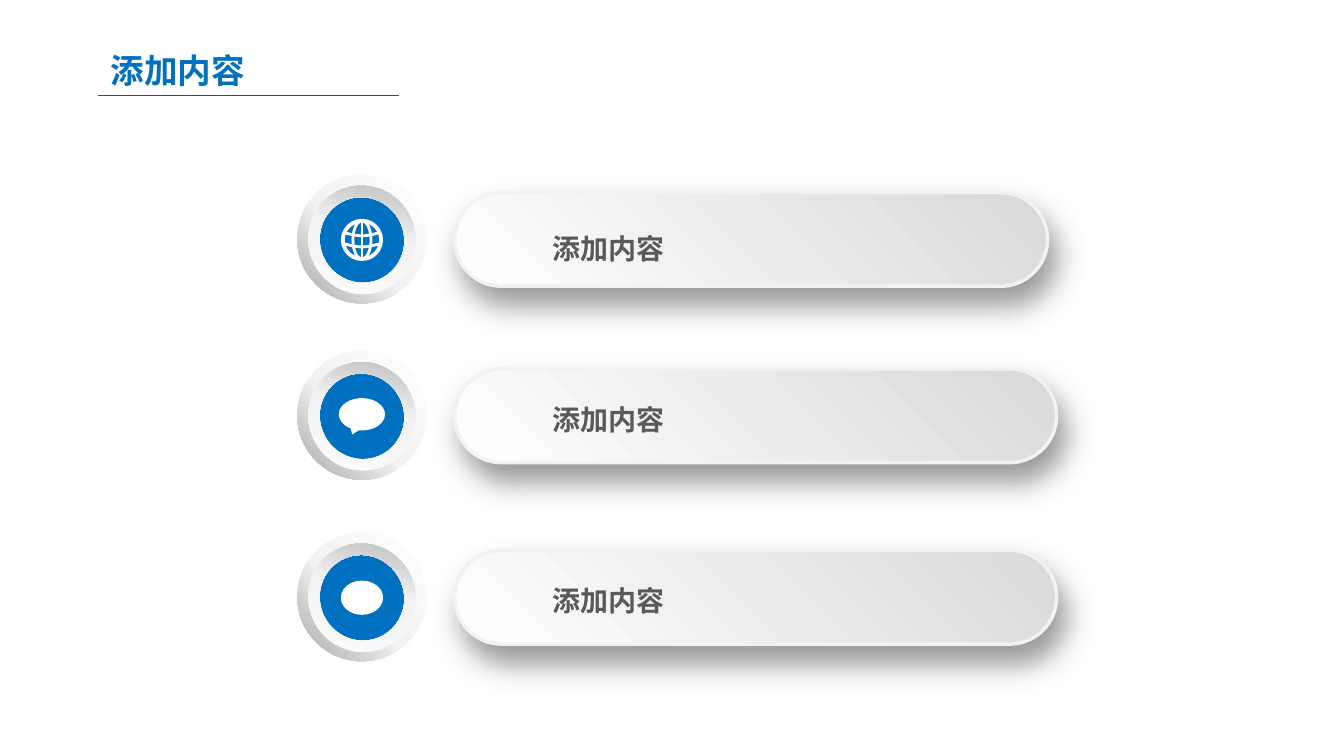
"""Build a slide with a title and three round badges beside pill-shaped labels."""
from math import cos, pi

from pptx import Presentation
from pptx.dml.color import RGBColor
from pptx.enum.shapes import MSO_CONNECTOR, MSO_SHAPE
from pptx.enum.text import MSO_ANCHOR, MSO_AUTO_SIZE, PP_ALIGN
from pptx.oxml import parse_xml
from pptx.oxml.ns import nsdecls, qn
from pptx.util import Inches, Pt

FONT = "Noto Sans CJK SC"
BLUE = "0070C0"
WHITE = "FFFFFF"
PILL_STOPS = [(0, "D9D9D9"), (100, WHITE)]
RING_STOPS = [(0, WHITE), (55, "F2F2F2"), (100, "A6A6A6")]


def paint(shape, fill=None, stops=(), line=None, line_width=0):
    """Set a solid, gradient or empty fill and the outline, without a shadow."""
    shape.shadow.inherit = False
    if stops:
        shape.fill.gradient()
        stop_xml = "".join(
            f'<a:gs pos="{position * 1000}"><a:srgbClr val="{color}"/></a:gs>'
            for position, color in stops)
        properties = shape._element.spPr
        properties.replace(properties.find(qn("a:gradFill")), parse_xml(
            f'<a:gradFill {nsdecls("a")} rotWithShape="1"><a:gsLst>{stop_xml}</a:gsLst>'
            f'<a:lin ang="{135 * 60000}" scaled="0"/></a:gradFill>'))
    elif fill:
        shape.fill.solid()
        shape.fill.fore_color.rgb = RGBColor.from_string(fill)
    else:
        shape.fill.background()
    if line:
        shape.line.color.rgb = RGBColor.from_string(line)
        shape.line.width = Pt(line_width)
    else:
        shape.line.fill.background()


def write(shape, text, size, color, alignment):
    """Put one bold line of text into a shape that grows with it."""
    frame = shape.text_frame
    frame.text = text
    frame.word_wrap = False
    frame.auto_size = MSO_AUTO_SIZE.SHAPE_TO_FIT_TEXT
    frame.vertical_anchor = MSO_ANCHOR.TOP
    paragraph = frame.paragraphs[0]
    paragraph.alignment = alignment
    font = paragraph.runs[0].font
    font.size = Pt(size)
    font.bold = True
    font.name = FONT
    font.color.rgb = RGBColor.from_string(color)
    font._element.append(parse_xml(f'<a:ea {nsdecls("a")} typeface="{FONT}"/>'))


presentation = Presentation()
presentation.slide_width = Inches(13.33)
presentation.slide_height = Inches(7.5)
slide = presentation.slides.add_slide(presentation.slide_layouts[5])
shapes = slide.shapes

title = shapes.title
title.left, title.top = Inches(0.99), Inches(0.44)
title.width, title.height = Inches(1.55), Inches(0.5)
write(title, "添加内容", 24, BLUE, PP_ALIGN.CENTER)

underline = shapes.add_connector(
    MSO_CONNECTOR.STRAIGHT, Inches(0.97), Inches(0.95), Inches(3.96), Inches(0.95))
underline.line.color.rgb = RGBColor.from_string("005DA2")
underline.line.width = Pt(1)
underline._element.spPr.append(parse_xml(f'<a:effectLst {nsdecls("a")}/>'))

rows = [(1.73, 5.88, 2.23), (3.48, 5.97, 3.92), (5.28, 5.97, 5.72)]
badge_parts = [
    (MSO_SHAPE.DONUT, 2.95, 0.04, 1.22, 1.22, 0.049, 0),
    (MSO_SHAPE.OVAL, 2.97, 0.06, 1.17, 1.17, None, 0),
    (MSO_SHAPE.DONUT, 2.95, 0, 1.28, 1.28, 0.094, 0),
    (MSO_SHAPE.DONUT, 3.06, 0.11, 1.06, 1.08, 0.106, 150),
]
for badge_top, pill_width, label_top in rows:
    pill = shapes.add_shape(
        MSO_SHAPE.ROUNDED_RECTANGLE, Inches(4.51), Inches(badge_top + 0.18),
        Inches(pill_width), Inches(0.93))
    pill.adjustments[0] = 0.5
    paint(pill, stops=PILL_STOPS, line="F2F2F2", line_width=2.5)
    pill._element.spPr.find(qn("a:effectLst")).append(parse_xml(
        f'<a:outerShdw {nsdecls("a")} blurRad="{Pt(21)}" dist="{Pt(13)}" '
        f'dir="{69 * 60000}" algn="tl" rotWithShape="0">'
        '<a:srgbClr val="808080"><a:alpha val="80000"/></a:srgbClr></a:outerShdw>'))

    label = shapes.add_textbox(Inches(5.35), Inches(label_top), Inches(1.39), Inches(0.47))
    frame = label.text_frame
    frame.margin_left = frame.margin_right = Inches(0.13)
    frame.margin_top = frame.margin_bottom = Inches(0.07)
    write(label, "添加内容", 20, "595959", PP_ALIGN.LEFT)

    for kind, left, offset, width, height, thickness, rotation in badge_parts:
        part = shapes.add_shape(
            kind, Inches(left), Inches(badge_top + offset), Inches(width), Inches(height))
        part.rotation = rotation
        if thickness:
            part.adjustments[0] = thickness
            paint(part, stops=RING_STOPS)
        else:
            paint(part, fill=BLUE)

globe_x, globe_y = 3.59, 2.38
for width, line_width in [(0.38, 2.75), (0.18, 2)]:
    meridian = shapes.add_shape(
        MSO_SHAPE.OVAL, Inches(globe_x - width / 2), Inches(globe_y - 0.19),
        Inches(width), Inches(0.38))
    paint(meridian, line=WHITE, line_width=line_width)

axis = [(globe_x, globe_y - 0.19), (globe_x, globe_y + 0.19)]
parallels = [
    [(globe_x + 0.17 * step / 6, globe_y + offset + 0.03 * cos(pi * step / 12))
     for step in range(-6, 7)]
    for offset in (-0.07, 0.04)]
for points in [axis, *parallels]:
    corners = [(Inches(x), Inches(y)) for x, y in points]
    builder = shapes.build_freeform(*corners[0])
    builder.add_line_segments(corners[1:], close=False)
    paint(builder.convert_to_shape(), line=WHITE, line_width=2)

for kind, top, width, height in [
        (MSO_SHAPE.OVAL_CALLOUT, 3.95, 0.46, 0.32), (MSO_SHAPE.OVAL, 5.76, 0.42, 0.34)]:
    icon = shapes.add_shape(
        kind, Inches(3.59 - width / 2), Inches(top), Inches(width), Inches(height))
    paint(icon, fill=WHITE)

presentation.save("out.pptx")
